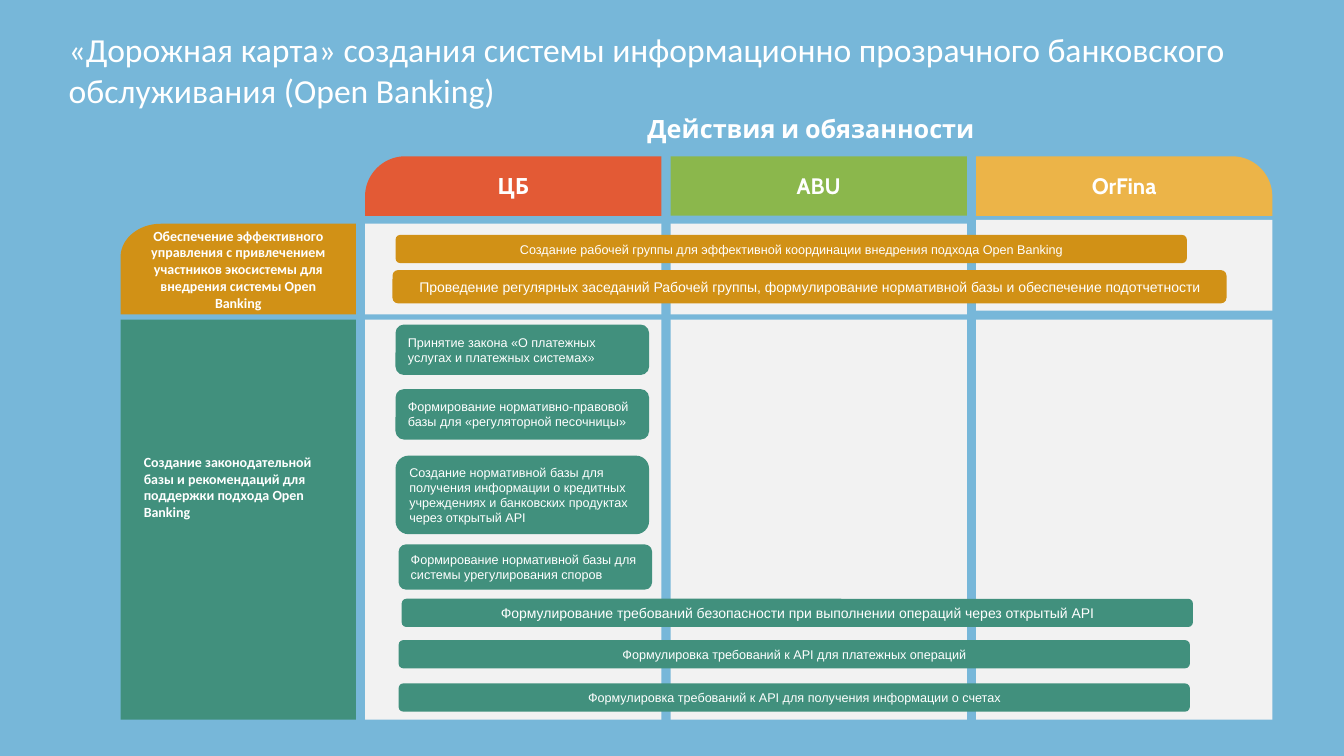
import math
from dataclasses import dataclass

import pptx
import pptx.dml.color
import pptx.enum.shapes
import pptx.enum.text
import pptx.util


@dataclass(frozen=True)
class Theme:
    background: str = "77B7D9"
    panel: str = "F2F2F2"
    text: str = "FFFFFF"
    red: str = "E35A35"
    green: str = "8BB74C"
    yellow: str = "ECB448"
    ochre: str = "D19116"
    teal: str = "41907D"
    title_font: str = "Calibri"
    heading_font: str = "Cabin"
    body_font: str = "Arial"
    title_size: int = 24
    subtitle_size: int = 18
    heading_size: int = 16
    label_size: int = 10
    large_size: int = 10
    small_size: int = 9


THEME = Theme()
ALIGN = pptx.enum.text.PP_ALIGN
SLIDE_SIZE = pptx.util.Inches(13.33), pptx.util.Inches(7.5)

# Horizontal lengths count columns from the first one; vertical lengths are percent of slide height.
FIRST_COLUMN, COLUMN_PITCH = 0.2716, 0.2273
COLUMN_WIDTH = 0.97
LABEL_LEFT, LABEL_WIDTH = -0.8, 0.77
HEADER_ROW = 20.67, 7.87
GOVERNANCE_ROW = 29.6, 12
LAW_ROW = 42.27, 52.93
CORNER_STEPS = 24
BAR_WIDTH, CARD_WIDTH = 2.59, 0.83
BAR_HEIGHT, CARD_HEIGHT = 3.73, 6.67


def write(shape, text, *, font, size, bold=False, align=ALIGN.CENTER, insets=(0.1, 0.05, 0.1, 0.05)):
    """Fill a shape with one paragraph; insets are left, top, right, bottom in inches."""
    frame = shape.text_frame
    frame.word_wrap = True
    frame.vertical_anchor = pptx.enum.text.MSO_ANCHOR.MIDDLE
    frame.margin_left, frame.margin_top, frame.margin_right, frame.margin_bottom = map(
        pptx.util.Inches, insets)
    paragraph = frame.paragraphs[0]
    paragraph.alignment = align
    run = paragraph.add_run()
    run.text = text
    run.font.name = font
    run.font.size = pptx.util.Pt(size)
    run.font.bold = bold
    run.font.color.rgb = pptx.dml.color.RGBColor.from_string(THEME.text)


class RoadmapSlide:
    def __init__(self, presentation, theme):
        self.theme = theme
        self.width, self.height = presentation.slide_width, presentation.slide_height
        self.slide = presentation.slides.add_slide(presentation.slide_layouts[6])
        self.paint(self.slide.background.fill, theme.background)

    def paint(self, fill, color):
        fill.solid()
        fill.fore_color.rgb = pptx.dml.color.RGBColor.from_string(color)

    def finish(self, shape, color):
        self.paint(shape.fill, color)
        shape.line.fill.background()
        shape.shadow.inherit = False
        return shape

    def place(self, column, top, columns, height):
        """Turn columns and percent of height into slide lengths."""
        return (int(self.width * (FIRST_COLUMN + column * COLUMN_PITCH)),
                int(self.height * top / 100),
                int(self.width * columns * COLUMN_PITCH),
                int(self.height * height / 100))

    def text(self, box, text, **style):
        write(self.slide.shapes.add_textbox(*self.place(*box)), text, **style)

    def panel(self, box, color):
        kind = pptx.enum.shapes.MSO_SHAPE.RECTANGLE
        return self.finish(self.slide.shapes.add_shape(kind, *self.place(*box)), color)

    def bar(self, box, color, text, size, align=ALIGN.CENTER):
        kind = pptx.enum.shapes.MSO_SHAPE.ROUNDED_RECTANGLE
        shape = self.finish(self.slide.shapes.add_shape(kind, *self.place(*box)), color)
        write(shape, text, font=self.theme.body_font, size=size, align=align)

    def tab(self, box, color, round_right=False, radius_y=0.4):
        """Draw a block with one large rounded top corner."""
        left, top, width, height = self.place(*box)
        radius_x, radius_y = pptx.util.Inches(0.4), pptx.util.Inches(radius_y)
        points = [(width, 0), (width, height), (0, height)]
        for step in range(CORNER_STEPS + 1):
            angle = math.pi / 2 * step / CORNER_STEPS
            points.append((radius_x * (1 - math.cos(angle)), radius_y * (1 - math.sin(angle))))
        if round_right:
            points = [(width - x, y) for x, y in points]
        points = [(round(left + x), round(top + y)) for x, y in points]
        builder = self.slide.shapes.build_freeform(*points[0])
        builder.add_line_segments(points[1:], close=True)
        return self.finish(builder.convert_to_shape(), color)


def add_headings(page):
    page.text((-0.97, 4, 3.96, 10.4),
              "«Дорожная карта» создания системы информационно прозрачного банковского "
              "обслуживания (Open Banking)",
              font=THEME.title_font, size=THEME.title_size, align=ALIGN.LEFT,
              insets=(0, 0.07, 0, 0.07))
    page.text((-0.06, 14.27, 3.04, 5.33), "Действия и обязанности",
              font=THEME.heading_font, size=THEME.subtitle_size, bold=True)


def add_grid(page):
    headers = [("ЦБ", THEME.red), ("ABU", THEME.green), ("OrFina", THEME.yellow)]
    for column, (name, color) in enumerate(headers):
        box = (column, HEADER_ROW[0], COLUMN_WIDTH, HEADER_ROW[1])
        if column == 1:
            header = page.panel(box, color)
        else:
            header = page.tab(box, color, round_right=column == 2)
        write(header, name, font=THEME.heading_font, size=THEME.heading_size, bold=True)
        lift = 0.5 if column == 2 else 0
        page.panel((column, GOVERNANCE_ROW[0] - lift, COLUMN_WIDTH, GOVERNANCE_ROW[1]), THEME.panel)
        page.panel((column, LAW_ROW[0], COLUMN_WIDTH, LAW_ROW[1]), THEME.panel)


def add_row_labels(page):
    label_style = dict(font=THEME.title_font, size=THEME.label_size, bold=True)
    governance = page.tab((LABEL_LEFT, GOVERNANCE_ROW[0], LABEL_WIDTH, GOVERNANCE_ROW[1]),
                          THEME.ochre, radius_y=0.33)
    write(governance,
          "Обеспечение эффективного управления с привлечением участников экосистемы для "
          "внедрения системы Open Banking", insets=(0.25, 0, 0.25, 0), **label_style)
    law = page.panel((LABEL_LEFT, LAW_ROW[0], LABEL_WIDTH, LAW_ROW[1]), THEME.teal)
    write(law, "Создание законодательной базы и рекомендаций для поддержки подхода Open Banking",
          align=ALIGN.LEFT, insets=(0.23, 0, 0.16, 0.65), **label_style)


def add_actions(page):
    small, large = THEME.small_size, THEME.large_size
    bars = [
        (0.1, 31.07, BAR_WIDTH, BAR_HEIGHT, THEME.ochre, small,
         "Создание рабочей группы для эффективной координации внедрения подхода Open Banking"),
        (0.09, 35.73, 2.73, 4.4, THEME.ochre, large,
         "Проведение регулярных заседаний Рабочей группы, формулирование нормативной базы "
         "и обеспечение подотчетности"),
        (0.12, 79.2, BAR_WIDTH, BAR_HEIGHT, THEME.teal, large,
         "Формулирование требований безопасности при выполнении операций через открытый API"),
        (0.11, 84.67, BAR_WIDTH, BAR_HEIGHT, THEME.teal, small,
         "Формулировка требований к API для платежных операций"),
        (0.11, 90.4, BAR_WIDTH, BAR_HEIGHT, THEME.teal, small,
         "Формулировка требований к API для получения информации о счетах"),
    ]
    for *box, color, size, text in bars:
        page.bar(box, color, text, size)

    cards = [
        (0.1, 42.93, CARD_HEIGHT, "Принятие закона «О платежных услугах и платежных системах»"),
        (0.1, 51.47, CARD_HEIGHT,
         "Формирование нормативно-правовой базы для «регуляторной песочницы»"),
        (0.1, 60.27, 10.4,
         "Создание нормативной базы для получения информации о кредитных учреждениях "
         "и банковских продуктах через открытый API"),
        (0.11, 72, 6, "Формирование нормативной базы для системы урегулирования споров"),
    ]
    for column, top, height, text in cards:
        page.bar((column, top, CARD_WIDTH, height), THEME.teal, text, small, ALIGN.LEFT)


def main():
    presentation = pptx.Presentation()
    presentation.slide_width, presentation.slide_height = SLIDE_SIZE
    page = RoadmapSlide(presentation, THEME)
    add_headings(page)
    add_grid(page)
    add_row_labels(page)
    add_actions(page)
    presentation.save("out.pptx")


if __name__ == "__main__":
    main()
